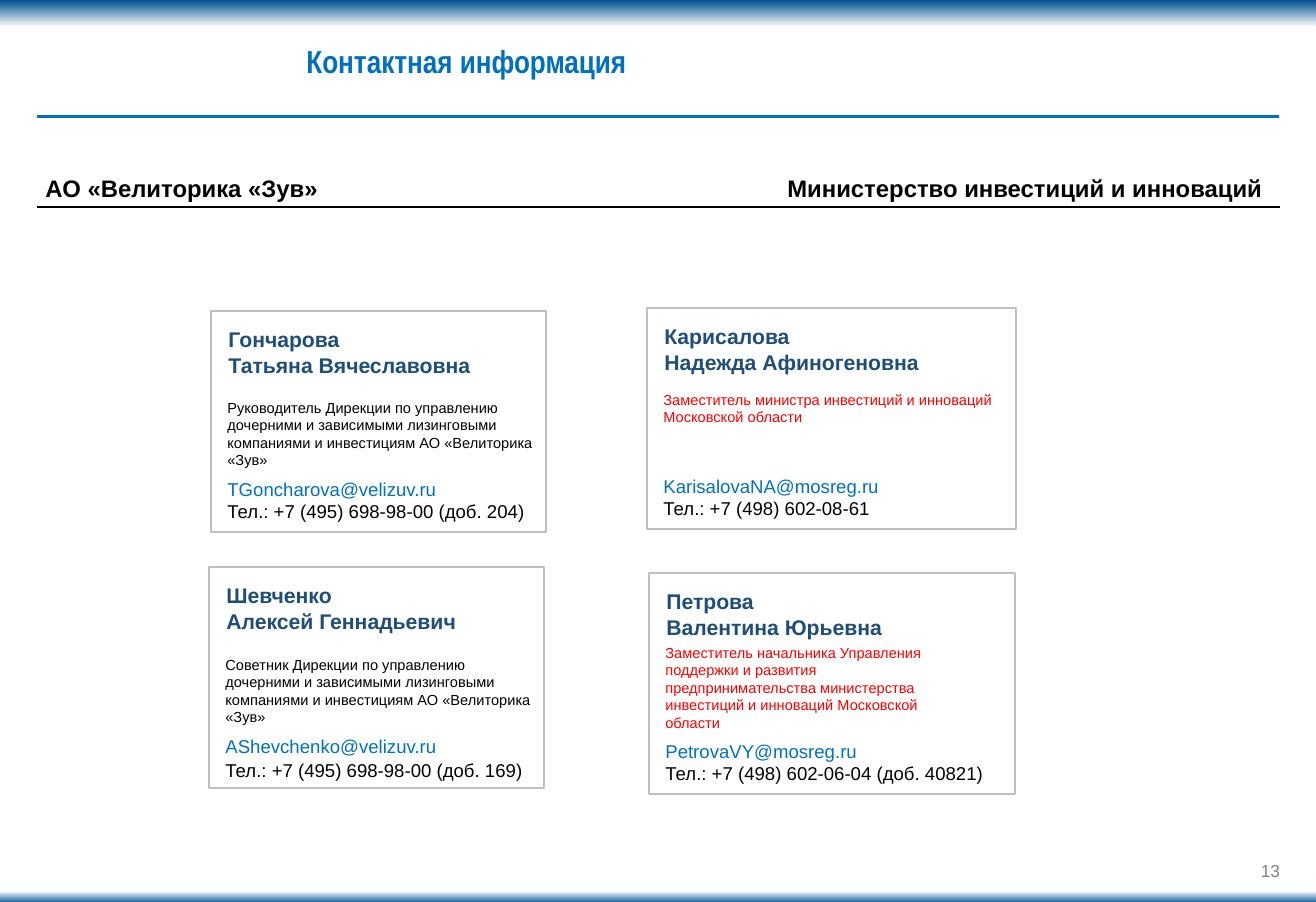
from dataclasses import dataclass

from lxml.etree import SubElement
from pptx import Presentation
from pptx.dml.color import RGBColor as RGB
from pptx.enum.shapes import MSO_CONNECTOR as Link, MSO_SHAPE as Form
from pptx.enum.text import MSO_ANCHOR as Anchor, PP_ALIGN as Align
from pptx.oxml.ns import qn
from pptx.util import Pt

SCALE = 9575


@dataclass(frozen=True)
class Theme:
    font: str = "Arial"
    narrow: str = "Arial Narrow"
    white: str = "FFFFFF"
    black: str = "000000"
    blue: str = "0070C0"
    navy: str = "1F4E79"
    deep: str = "004E8E"
    red: str = "FF0000"
    grey: str = "808080"
    frame: str = "BFBFBF"
    title: int = 24
    head: int = 18
    name: int = 16
    mail: int = 14
    page: int = 13
    role: int = 11


THEME = Theme()


@dataclass(frozen=True)
class Person:
    box: tuple
    name: str
    role: str
    hue: str
    drop: int
    width: int
    mail: str
    pitch: float = 1.0


PEOPLE = [
    Person((211, 311, 335), "Гончарова\nТатьяна Вячеславовна",
           "Руководитель Дирекции по управлению дочерними и зависимыми лизинговыми "
           "компаниями и инвестициям АО «Велиторика «Зув»",
           THEME.black, 83, 329,
           "TGoncharova@velizuv.ru\nТел.: +7 (495) 698-98-00 (доб. 204)"),
    Person((649, 573, 366), "Петрова\nВалентина Юрьевна",
           "Заместитель начальника Управления поддержки и развития "
           "предпринимательства министерства инвестиций и инноваций Московской области",
           THEME.red, 66, 298,
           "PetrovaVY@mosreg.ru\nТел.: +7 (498) 602-06-04 (доб. 40821)"),
    Person((209, 567, 335), "Шевченко\nАлексей Геннадьевич",
           "Советник Дирекции по управлению дочерними и зависимыми лизинговыми "
           "компаниями и инвестициям АО «Велиторика «Зув»",
           THEME.black, 84, 329,
           "AShevchenko@velizuv.ru\nТел.: +7 (495) 698-98-00 (доб. 169)", 1.06),
    Person((647, 308, 369), "Карисалова\nНадежда Афиногеновна",
           "Заместитель министра инвестиций и инноваций Московской области",
           THEME.red, 78, 361,
           "KarisalovaNA@mosreg.ru\nТел.: +7 (498) 602-08-61"),
]


def px(*sizes):
    return [size * SCALE for size in sizes]


def tint(code):
    return RGB.from_string(code)


def add_text(shapes, box, words, size, hues, bold=False, font=THEME.font, pitch=None):
    item = shapes.add_textbox(*px(*box))
    frame = item.text_frame
    frame.word_wrap = True
    frame.text = words
    for index, line in enumerate(frame.paragraphs):
        line.line_spacing = pitch
        for run in line.runs:
            run.font.name = font
            run.font.size = Pt(size)
            run.font.bold = bold
            run.font.color.rgb = tint(hues[min(index, len(hues) - 1)])
    return frame


def add_rule(shapes, left, right, top, hue, width):
    rule = shapes.add_connector(Link.STRAIGHT, *px(left, top, right, top))
    rule.line.color.rgb = tint(hue)
    rule.line.width = Pt(width)
    SubElement(rule._element.spPr, qn("a:effectLst"))


def add_band(shapes, top, height, angle):
    band = shapes.add_shape(Form.RECTANGLE, *px(0, top, 1316, height))
    band.shadow.inherit = False
    band.line.fill.background()
    band.fill.gradient()
    band.fill.gradient_angle = angle
    for stop, hue in zip(band.fill.gradient_stops, (THEME.deep, THEME.white)):
        stop.color.rgb = tint(hue)
    for stop, place in zip(band.fill.gradient_stops, (0, 1)):
        stop.position = place


def add_card(shapes, person):
    left, top, width = person.box
    parts = shapes.add_group_shape().shapes
    card = parts.add_shape(Form.RECTANGLE, *px(left, top, width, 221))
    card.shadow.inherit = False
    card.fill.background()
    card.line.color.rgb = tint(THEME.frame)
    card.line.width = Pt(1)
    add_text(parts, (left + 8, top + 11, width - 8, 61), person.name,
             THEME.name, [THEME.navy], bold=True)
    add_text(parts, (left + 7, top + 162, width - 8, 56), person.mail,
             THEME.mail, [THEME.blue, THEME.black], pitch=person.pitch)
    add_text(parts, (left + 7, top + person.drop, person.width, 81), person.role,
             THEME.role, [person.hue])


def main():
    deck = Presentation()
    deck.slide_width, deck.slide_height = px(1316, 902)
    shapes = deck.slides.add_slide(deck.slide_layouts[6]).shapes

    add_band(shapes, 891, 13, 90)
    add_band(shapes, 0, 27, 270)

    page = add_text(shapes, (1240, 862, 40, 19), "13", THEME.page, [THEME.grey],
                    pitch=Pt(14.3))
    page.margin_left = page.margin_right = page.margin_top = page.margin_bottom = 0
    page.paragraphs[0].alignment = Align.RIGHT

    add_rule(shapes, 37, 1279, 117, THEME.blue, 2.25)
    title = add_text(shapes, (297, 24, 983, 73), "Контактная информация",
                     THEME.title, [THEME.blue], bold=True, font=THEME.narrow)
    title.vertical_anchor = Anchor.MIDDLE

    heads = [(36, 350, "АО «Велиторика «Зув»"),
             (778, 502, "Министерство инвестиций и инноваций")]
    for left, width, words in heads:
        add_text(shapes, (left, 169, width, 38), words, THEME.head,
                 [THEME.black], bold=True)
    add_rule(shapes, 37, 1280, 207, THEME.black, 1.5)

    for person in PEOPLE:
        add_card(shapes, person)

    deck.save("out.pptx")


if __name__ == "__main__":
    main()
